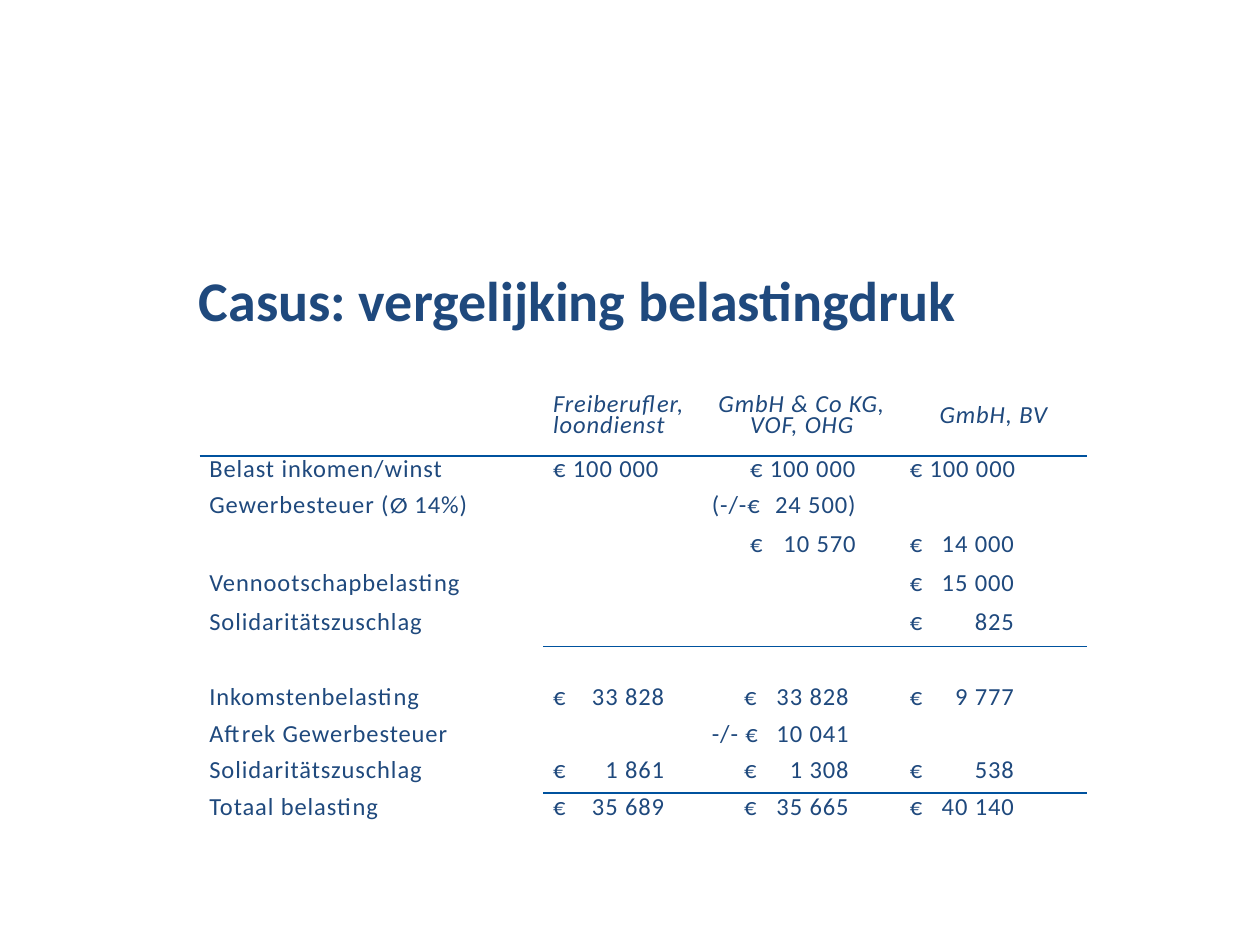
from lxml.etree import SubElement
from pptx import Presentation
from pptx.dml.color import RGBColor as RGB
from pptx.enum.text import MSO_ANCHOR as ANCHOR, MSO_AUTO_SIZE as AUTO, PP_ALIGN as ALIGN
from pptx.oxml.ns import qn
from pptx.util import Cm, Pt

NAVY = "1F497D"
LINE = "00529E"
AVERAGE = "∅ "


def format_run(r, **values):
    values = {"name": "Calibri", "bold": False, "italic": False, **values}
    for name, value in values.items():
        setattr(r.font, name, value)
    r.font.color.rgb = RGB.from_string(NAVY)


def add_border(cell, side):
    """Draw one cell edge; side is lnT or lnB."""
    ln = SubElement(cell._tc.get_or_add_tcPr(), qn(f"a:{side}"), w=str(Pt(1)))
    fill = SubElement(ln, qn("a:solidFill"))
    SubElement(fill, qn("a:srgbClr"), val=LINE)


prs = Presentation()
prs.slide_width, prs.slide_height = Cm(25.4), Cm(19.05)
s = prs.slides.add_slide(prs.slide_layouts[5])

# Title
title = s.shapes.title
title.left, title.top, title.width, title.height = Cm(2.49), Cm(5.21), Cm(21.41), Cm(1.63)
tf = title.text_frame
tf.auto_size = AUTO.NONE
tf.vertical_anchor = ANCHOR.MIDDLE
tf.margin_left = Cm(1.52)
p = tf.paragraphs[0]
p.alignment = ALIGN.LEFT
r = p.add_run()
r.text = "Casus: vergelijking belastingdruk"
format_run(r, size=Pt(32), bold=True)

# Table contents: a tab sets the euro sign or the amount on its stop
rows = [
    ("", "Freiberufler,\nloondienst", "GmbH & Co KG, VOF, OHG", "GmbH, BV"),
    ("Belast inkomen/winst", "€ 100 000", "\t€ 100 000", "€ 100 000"),
    ("Gewerbesteuer (∅ 14%)", "", "(-/-€\t24 500)", ""),
    ("", "", "\t€\t10 570", "€\t14 000"),
    ("Vennootschapbelasting", "", "", "€\t15 000"),
    ("Solidaritätszuschlag", "", "", "€\t825"),
    ("", "", "", ""),
    ("Inkomstenbelasting", "€\t33 828", "\t€\t33 828", "€\t9 777"),
    ("Aftrek Gewerbesteuer", "", "-/- €\t10 041", ""),
    ("Solidaritätszuschlag", "€\t1 861", "\t€\t1 308", "€\t538"),
    ("Totaal belasting", "€\t35 689", "\t€\t35 665", "€\t40 140"),
]
widths = [6.93, 3.2, 3.99, 3.73]
heights = [1.47, 0.71, 0.76] + [0.79] * 3 + [0.74] * 5
ruled = {0: 0, 5: 1, 9: 1}  # row above the rule: first ruled column
subtotal_row = 6

frame = s.shapes.add_table(len(rows), len(widths), Cm(4.04), Cm(7.72),
                           Cm(sum(widths)), Cm(sum(heights)))
table = frame.table
table.first_row = table.horz_banding = False
for col, width in zip(table.columns, widths):
    col.width = Cm(width)

for i, (row, height) in enumerate(zip(rows, heights)):
    table.rows[i].height = Cm(height)
    middle_stops = [("l", 0.77), ("r", 2.9)] if i < subtotal_row else [("l", 0.65), ("r", 2.76)]
    stops = [[], [("r", 2.24)], middle_stops, [("r", 2.1)]]
    for j, text in enumerate(row):
        cell = table.cell(i, j)
        cell.vertical_anchor = ANCHOR.MIDDLE
        cell.margin_left = cell.margin_right = Cm(0.18)
        cell.margin_top = cell.margin_bottom = 0
        if j >= ruled.get(i - 1, len(row)):
            add_border(cell, "lnT")
        if j >= ruled.get(i, len(row)):
            add_border(cell, "lnB")
        cell.fill.background()

        tf = cell.text_frame
        for k, line in enumerate(text.split("\n")):
            p = tf.add_paragraph() if k else tf.paragraphs[0]
            if "\t" in line:
                tabs = SubElement(p._p.get_or_add_pPr(), qn("a:tabLst"))
                for align, pos in stops[j]:
                    SubElement(tabs, qn("a:tab"), pos=str(Cm(pos)), algn=align)
            p.line_spacing = Pt(12)
            p.alignment = ALIGN.CENTER if i == 0 and j > 1 else ALIGN.LEFT
            for part in filter(None, line.partition(AVERAGE)):
                r = p.add_run()
                r.text = part
                symbol = part == AVERAGE
                format_run(r, size=Pt(12 if symbol else 14), bold=symbol, italic=i == 0)
                r.font._element.set("spc", "50")
            if not line:
                SubElement(p._p, qn("a:endParaRPr"), sz="1400")

prs.save("out.pptx")
